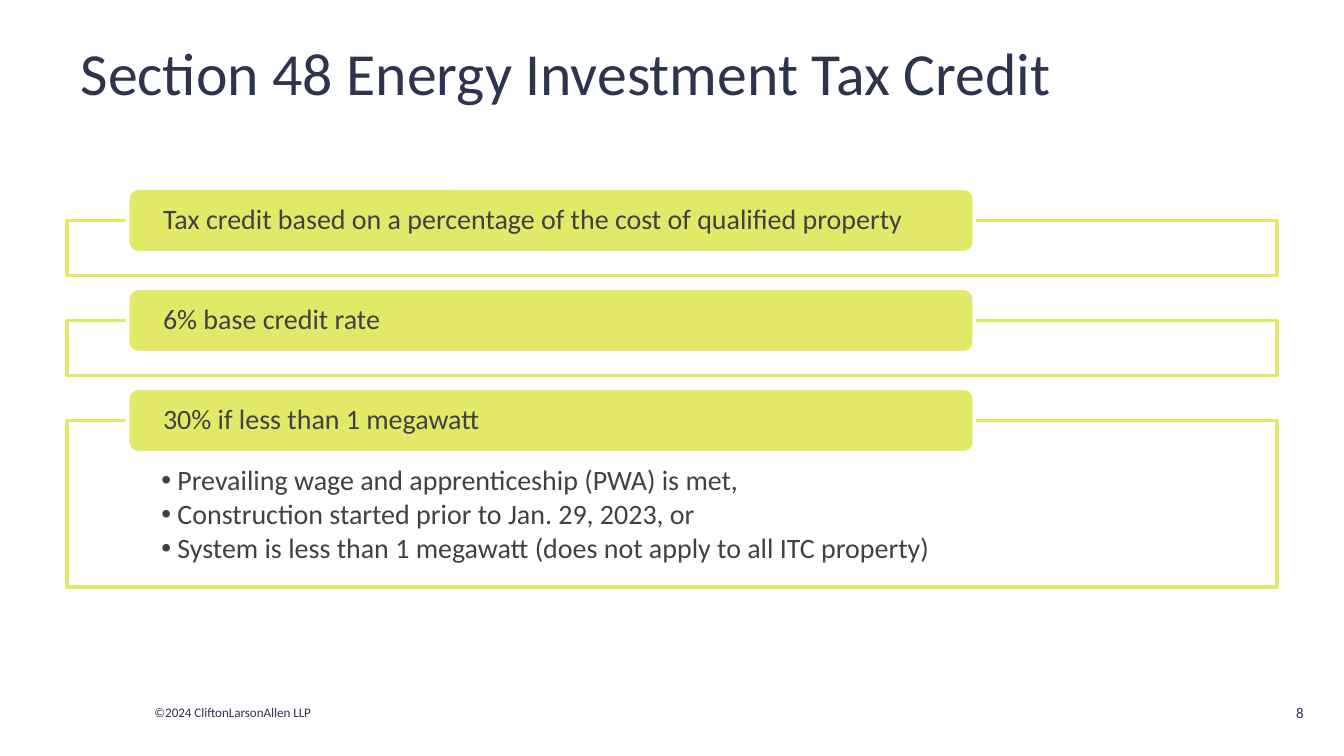
from lxml.etree import SubElement
from pptx import Presentation
from pptx.dml.color import RGBColor
from pptx.enum.shapes import MSO_SHAPE as Preset
from pptx.enum.text import MSO_ANCHOR as Anchor, MSO_AUTO_SIZE as AutoSize, PP_ALIGN as Align
from pptx.oxml.ns import qn
from pptx.util import Pt

NAVY = RGBColor(0x2E, 0x33, 0x4E)
GRAY = RGBColor(0x41, 0x41, 0x42)
LIME = RGBColor(0xE2, 0xE8, 0x68)
WHITE = RGBColor(0xFF, 0xFF, 0xFF)

TITLE = "Section 48 Energy Investment Tax Credit"
HEADINGS = [
    "Tax credit based on a percentage of the cost of qualified property",
    "6% base credit rate",
    "30% if less than 1 megawatt",
]
CONDITIONS = [
    "Prevailing wage and apprenticeship (PWA) is met,",
    "Construction started prior to Jan. 29, 2023, or",
    "System is less than 1 megawatt (does not apply to all ITC property)",
]
COPYRIGHT = "©2024 CliftonLarsonAllen LLP"
PAGE_NUMBER = "8"

PANEL_LEFT, PANEL_WIDTH = 36, 648
PANEL_HEIGHTS = [29.5, 29.5, 89.3]
TAB_LEFT, TAB_WIDTH, TAB_HEIGHT = 68.4, 453.6, 34.6
FIRST_TAB_TOP, TAB_PITCH = 100.8, 53.6
BULLET_INDENT = 8.64

TITLE_FONT = {"name": "Calibri", "size": Pt(32), "color": NAVY}
BODY_FONT = {"name": "Calibri", "size": Pt(15), "color": GRAY}
FOOTER_FONT = {"name": "Calibri", "size": Pt(7), "color": NAVY}
NUMBER_FONT = {"name": "Calibri", "size": Pt(8), "color": NAVY}


def place(box, left, top, width, height):
    box.left, box.top, box.width, box.height = map(Pt, (left, top, width, height))


def write(box, lines, font, anchor=Anchor.MIDDLE, align=Align.LEFT,
          insets=(7.2, 3.6, 7.2, 3.6), spacing=None, bullet=False):
    frame = box.text_frame
    frame.text = "\n".join(lines)
    frame.word_wrap = True
    frame.auto_size = AutoSize.NONE
    frame.vertical_anchor = anchor
    for side, inset in zip(("left", "top", "right", "bottom"), insets):
        setattr(frame, f"margin_{side}", Pt(inset))
    for para in frame.paragraphs:
        para.alignment = align
        para.space_before = Pt(0)
        para.space_after = Pt(2 if bullet else 0)
        if spacing:
            para.line_spacing = spacing
        if bullet:
            properties = para._p.get_or_add_pPr()
            properties.set("marL", str(Pt(BULLET_INDENT)))
            properties.set("indent", str(-Pt(BULLET_INDENT)))
            SubElement(properties, qn("a:buChar")).set("char", "•")
        for span in para.runs:
            for key, value in font.items():
                if key == "color":
                    span.font.color.rgb = value
                else:
                    setattr(span.font, key, value)


def add_block(page, preset, area, fill, line):
    block = page.shapes.add_shape(preset, *map(Pt, area))
    block.shadow.inherit = False
    block.fill.solid()
    block.fill.fore_color.rgb = fill
    block.line.color.rgb = line
    block.line.width = Pt(2)
    return block


def add_label(page, area, text, font, **layout):
    write(page.shapes.add_textbox(*map(Pt, area)), [text], font, **layout)


deck = Presentation()
deck.slide_width, deck.slide_height = Pt(720), Pt(405)
page = deck.slides.add_slide(deck.slide_layouts[1])

title = page.shapes.title
place(title, 36, 11.5, 648, 54)
write(title, [TITLE], TITLE_FONT)

for index, (heading, panel_height) in enumerate(zip(HEADINGS, PANEL_HEIGHTS)):
    tab_top = FIRST_TAB_TOP + index * TAB_PITCH
    panel_area = (PANEL_LEFT, tab_top + TAB_HEIGHT / 2, PANEL_WIDTH, panel_height)
    add_block(page, Preset.RECTANGLE, panel_area, WHITE, LIME)
    tab = add_block(page, Preset.ROUNDED_RECTANGLE,
                    (TAB_LEFT, tab_top, TAB_WIDTH, TAB_HEIGHT), LIME, WHITE)
    write(tab, [heading], BODY_FONT, insets=(17.3, 0, 17.3, 0), spacing=0.9)

conditions = page.placeholders[1]
place(conditions, *panel_area)
write(conditions, CONDITIONS, BODY_FONT, anchor=Anchor.TOP,
      insets=(50.4, 24.5, 50.4, 8.6), spacing=0.9, bullet=True)
tab.element.addprevious(conditions.element)

add_label(page, (75.6, 373.7, 108.7, 15.8), COPYRIGHT, FOOTER_FONT)
add_label(page, (674.6, 368, 31, 27.4), PAGE_NUMBER, NUMBER_FONT, align=Align.RIGHT)

deck.save("out.pptx")
